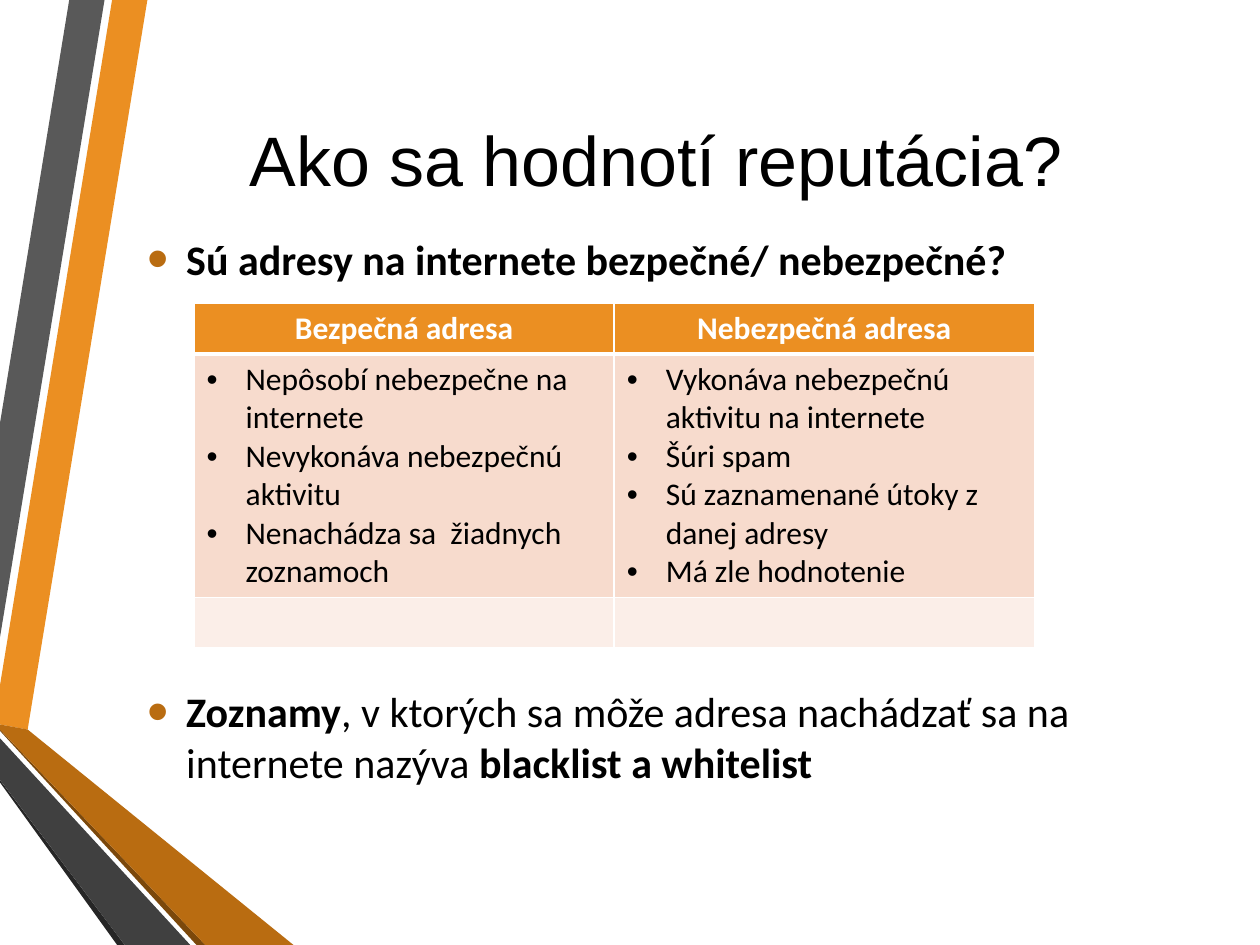
from dataclasses import dataclass

from lxml import etree
from pptx import Presentation
from pptx.dml.color import RGBColor
from pptx.enum.text import MSO_ANCHOR, PP_ALIGN
from pptx.oxml.ns import qn
from pptx.util import Inches, Pt

CENTER = PP_ALIGN.CENTER
LEFT = PP_ALIGN.LEFT
MIDDLE = MSO_ANCHOR.MIDDLE
TOP = MSO_ANCHOR.TOP


@dataclass(frozen=True)
class Theme:
    title_font: str = "Arial"
    body_font: str = "Calibri"
    title_size: int = 40
    body_size: int = 24
    table_size: int = 18
    indent: float = 0.31
    text: str = "000000"
    white: str = "FFFFFF"
    orange: str = "EB8F22"
    orange_dark: str = "B96C11"
    orange_edge: str = "7B480B"
    gray: str = "595959"
    gray_dark: str = "404040"
    gray_edge: str = "262626"
    row_fill: str = "F7DBCD"
    last_row_fill: str = "FBEEE8"


class SlideBuilder:
    def __init__(self, slide, theme):
        self.slide = slide
        self.theme = theme

    def band(self, points, color):
        """Draw a filled polygon from points in inches."""
        corners = [(Inches(x), Inches(y)) for x, y in points]
        builder = self.slide.shapes.build_freeform(*corners[0])
        builder.add_line_segments(corners[1:], close=True)
        shape = builder.convert_to_shape()
        shape.shadow.inherit = False
        shape.fill.solid()
        shape.fill.fore_color.rgb = RGBColor.from_string(color)
        shape.line.fill.background()

    def text_box(self, left, top, width, height, anchor):
        box = self.slide.shapes.add_textbox(
            Inches(left), Inches(top), Inches(width), Inches(height))
        text_frame = box.text_frame
        text_frame.word_wrap = True
        text_frame.vertical_anchor = anchor
        return text_frame

    def add_runs(self, paragraph, parts, font, size, color, align=LEFT):
        """Fill a paragraph with (text, bold) parts."""
        paragraph.alignment = align
        for text, bold in parts:
            run = paragraph.add_run()
            run.text = text
            run.font.name = font
            run.font.size = Pt(size)
            run.font.bold = bold
            run.font.color.rgb = RGBColor.from_string(color)

    def bullet(self, paragraph, color, percent=100):
        properties = paragraph._p.get_or_add_pPr()
        properties.set("marL", str(Inches(self.theme.indent)))
        properties.set("indent", str(-Inches(self.theme.indent)))
        color_element = etree.SubElement(properties, qn("a:buClr"))
        etree.SubElement(color_element, qn("a:srgbClr"), val=color)
        etree.SubElement(properties, qn("a:buSzPct"), val=str(percent * 1000))
        etree.SubElement(properties, qn("a:buFont"), typeface="Arial")
        etree.SubElement(properties, qn("a:buChar"), char="•")

    def title(self, text, left, top, width, height):
        text_frame = self.text_box(left, top, width, height, MIDDLE)
        self.add_runs(text_frame.paragraphs[0], [(text, False)], self.theme.title_font,
                      self.theme.title_size, self.theme.text, CENTER)

    def body(self, items, left, top, width, height, gap):
        """Add bulleted items, gap points apart."""
        text_frame = self.text_box(left, top, width, height, TOP)
        for index, parts in enumerate(items):
            paragraph = text_frame.add_paragraph() if index else text_frame.paragraphs[0]
            self.bullet(paragraph, self.theme.orange_dark, 145)
            paragraph.space_before = Pt(gap if index else 0)
            self.add_runs(paragraph, parts, self.theme.body_font,
                          self.theme.body_size, self.theme.text)

    def style_cell(self, cell, fill, bottom_width):
        properties = cell._tc.get_or_add_tcPr()
        for side, width in (("L", 1), ("R", 1), ("T", 1), ("B", bottom_width)):
            line = etree.SubElement(properties, qn(f"a:ln{side}"), w=str(Pt(width)))
            line_fill = etree.SubElement(line, qn("a:solidFill"))
            etree.SubElement(line_fill, qn("a:srgbClr"), val=self.theme.white)
        cell.fill.solid()
        cell.fill.fore_color.rgb = RGBColor.from_string(fill)

    def table(self, headings, lists, left, top, width, row_heights):
        """Build a heading row, a row of bulleted lists and an empty row."""
        theme = self.theme
        table = self.slide.shapes.add_table(
            len(row_heights), len(headings), Inches(left), Inches(top),
            Inches(width), Inches(sum(row_heights))).table
        for row, height in zip(table.rows, row_heights):
            row.height = Inches(height)
        fills = (theme.orange, theme.row_fill, theme.last_row_fill)
        for row_index, fill in enumerate(fills):
            for cell in table.rows[row_index].cells:
                self.style_cell(cell, fill, 1 if row_index else 3)
        for column, (heading, items) in enumerate(zip(headings, lists)):
            self.add_runs(table.cell(0, column).text_frame.paragraphs[0],
                          [(heading, True)], theme.body_font, theme.table_size,
                          theme.white, CENTER)
            text_frame = table.cell(1, column).text_frame
            for index, item in enumerate(items):
                paragraph = text_frame.add_paragraph() if index else text_frame.paragraphs[0]
                self.bullet(paragraph, theme.text)
                self.add_runs(paragraph, [(item, False)], theme.body_font,
                              theme.table_size, theme.text)


def main():
    presentation = Presentation()
    presentation.slide_width = Inches(10)
    presentation.slide_height = Inches(7.5)
    slide = presentation.slides.add_slide(presentation.slide_layouts[6])
    theme = Theme()
    builder = SlideBuilder(slide, theme)

    # Decorative bands, back to front
    bands = [
        ([(0, 5.44), (0, 5.75), (0.22, 5.79), (1.17, 0), (0.89, 0)], theme.orange),
        ([(0.83, 0), (0.55, 0), (0, 3.36), (0, 5.06)], theme.gray),
        ([(0, 6.19), (0, 6.21), (0.93, 7.5), (0.99, 7.5)], theme.gray_edge),
        ([(0, 5.79), (0, 5.8), (1.56, 7.5), (1.63, 7.5)], theme.orange_edge),
        ([(0, 5.79), (1.63, 7.5), (2.33, 7.5), (0.22, 5.79), (0, 5.75)],
         theme.orange_dark),
        ([(0, 6.19), (0.99, 7.5), (1.51, 7.5), (0, 5.86)], theme.gray_dark),
    ]
    for points, color in bands:
        builder.band(points, color)

    # Title and body text
    builder.title("Ako sa hodnotí reputácia?", 1.07, 0.5, 8.27, 1.52)
    builder.body([
        [("Sú adresy na internete bezpečné/ nebezpečné?", True)],
        [("Zoznamy", True),
         (", v ktorých sa môže adresa nachádzať sa na internete nazýva ", False),
         ("blacklist a whitelist", True)],
    ], 1.07, 1.8, 8.43, 4.78, gap=230)

    # Comparison table
    builder.table(
        ["Bezpečná adresa", "Nebezpečná adresa"],
        [["Nepôsobí nebezpečne na internete",
          "Nevykonáva nebezpečnú aktivitu",
          "Nenachádza sa  žiadnych zoznamoch"],
         ["Vykonáva nebezpečnú aktivitu na internete",
          "Šúri spam",
          "Sú zaznamenané útoky z danej adresy",
          "Má zle hodnotenie"]],
        1.54, 2.41, 6.67, [0.4, 1.93, 0.4])

    presentation.save("out.pptx")


if __name__ == "__main__":
    main()
